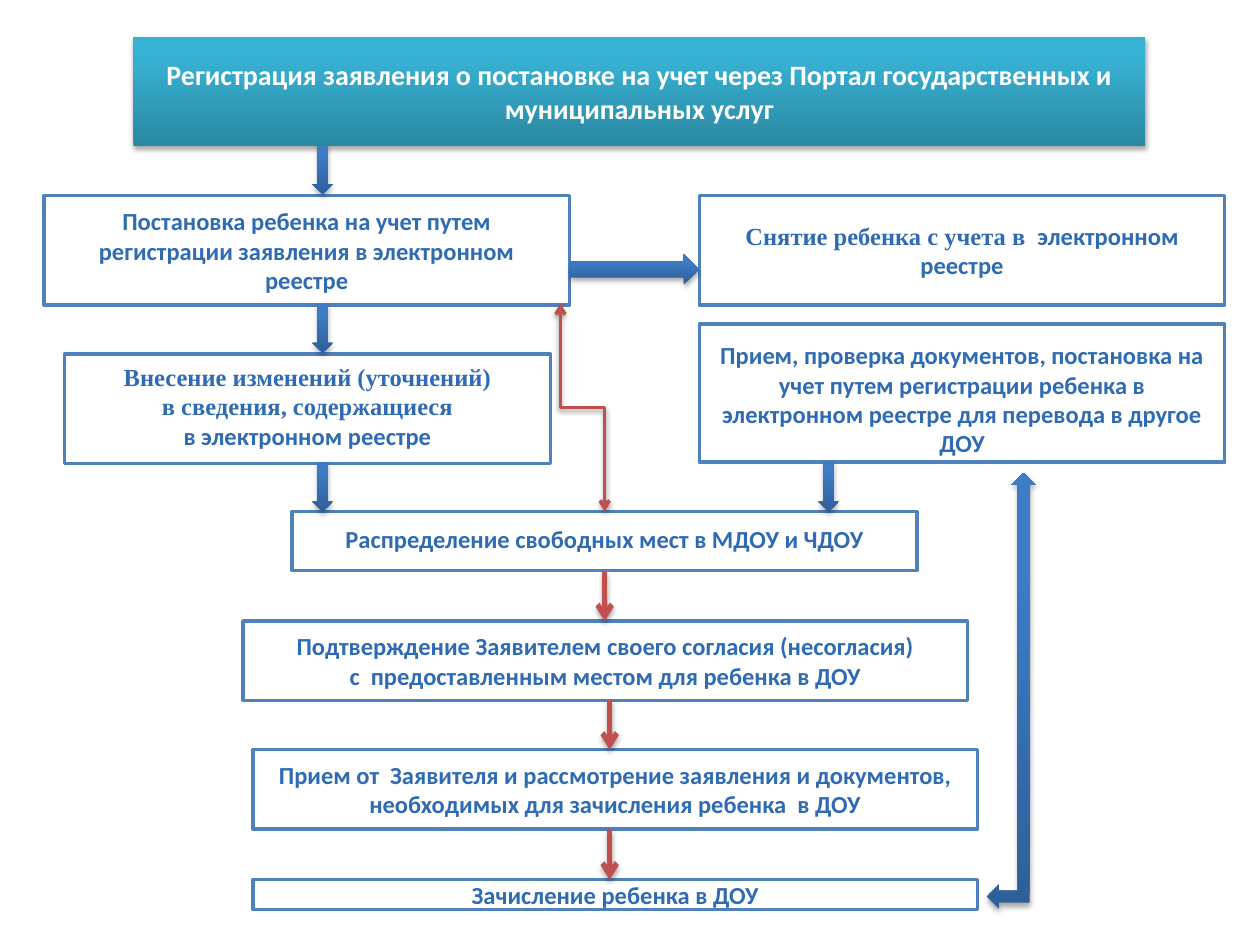
from lxml import etree
from pptx import Presentation
from pptx.dml.color import RGBColor
from pptx.enum.shapes import MSO_CONNECTOR as CONN, MSO_SHAPE as SHAPE
from pptx.enum.text import MSO_ANCHOR as ANCHOR, PP_ALIGN as ALIGN
from pptx.oxml.ns import qn
from pptx.util import Cm, Pt

SANS, SERIF = "Calibri", "Times New Roman"


def rgb(code):
    return RGBColor.from_string(code)


def add_shadow(shape):
    effects = etree.SubElement(shape._element.spPr, qn("a:effectLst"))
    outer = etree.SubElement(effects, qn("a:outerShdw"), blurRad=str(Pt(3.1)),
                             dist=str(Pt(1.8)), dir="5400000", rotWithShape="0")
    color = etree.SubElement(outer, qn("a:srgbClr"), val="000000")
    etree.SubElement(color, qn("a:alpha"), val="35000")


class Flowchart:
    BORDER, TEXT, RED = "4F81BD", "2F6BB3", "C0504D"
    BLUE_FADE = ("2F5F99", "3D7CC7")
    TEAL_FADE = ("2A88A2", "37B1D2")
    INSET = 0.13

    def __init__(self, slide):
        self.s = slide

    def shape(self, kind, x, y, w, h):
        sp = self.s.shapes.add_shape(kind, Cm(x), Cm(y), Cm(w), Cm(h))
        sp.shadow.inherit = False
        return sp

    def faded(self, kind, box, colors):
        """Shape with a vertical gradient, dark at the bottom, and a shadow."""
        sp = self.shape(kind, *box)
        sp.line.fill.background()
        sp.fill.gradient()
        sp.fill.gradient_angle = 90
        for stop, color, position in zip(sp.fill.gradient_stops, colors, (0, 0.8)):
            stop.color.rgb = rgb(color)
            stop.position = position
        effects = sp._element.spPr.find(qn("a:effectLst"))
        sp._element.spPr.remove(effects)
        add_shadow(sp)
        return sp

    def label(self, sp, lines, size, color, shift=0):
        """Centre the lines, each a list of (text, font); shift moves them down in cm."""
        tf = sp.text_frame
        tf.word_wrap = True
        tf.vertical_anchor = ANCHOR.MIDDLE
        tf.margin_top = Cm(self.INSET + max(shift, 0) * 2)
        tf.margin_bottom = Cm(self.INSET + max(-shift, 0) * 2)
        for i, line in enumerate(lines):
            p = tf.add_paragraph() if i else tf.paragraphs[0]
            p.alignment = ALIGN.CENTER
            for text, font in line:
                r = p.add_run()
                r.text = text
                r.font.name = font
                r.font.size = Pt(size)
                r.font.bold = True
                r.font.color.rgb = rgb(color)

    def title(self, box, text):
        sp = self.faded(SHAPE.RECTANGLE, box, self.TEAL_FADE)
        self.label(sp, [[(text, SANS)]], 16, "FFFFFF")

    def step(self, box, lines, shift=0):
        sp = self.shape(SHAPE.RECTANGLE, *box)
        sp.fill.solid()
        sp.fill.fore_color.rgb = rgb("FFFFFF")
        sp.line.color.rgb = rgb(self.BORDER)
        sp.line.width = Pt(2)
        self.label(sp, lines, 14, self.TEXT, shift)

    def arrow(self, kind, *box):
        self.faded(kind, box, self.BLUE_FADE)

    def connector(self, kind, ends, width, tips):
        c = self.s.shapes.add_connector(kind, *(Cm(v) for v in ends))
        c.line.color.rgb = rgb(self.RED)
        c.line.width = Pt(width)
        ln = c._element.spPr.find(qn("a:ln"))
        for tip in tips:
            etree.SubElement(ln, qn(f"a:{tip}"), type="arrow")
        add_shadow(c)
        return c

    def red_arrow(self, x, top, bottom):
        self.connector(CONN.STRAIGHT, (x, top, x, bottom), 3, ["tailEnd"])

    def red_elbow(self, x1, y1, x2, y2):
        """Double-headed elbow that leaves and arrives vertically."""
        cx, cy = (x1 + x2) / 2, (y1 + y2) / 2
        dx, dy = (x2 - x1) / 2, (y2 - y1) / 2
        c = self.connector(CONN.ELBOW, (cx + dy, cy - dx, cx - dy, cy + dx), 2,
                           ["headEnd", "tailEnd"])
        c._element.spPr.find(qn("a:xfrm")).set("rot", "16200000")


STEPS = [
    ((0.89, 3.94, 10.59, 2.21), [
        [("Постановка ребенка на учет путем", SANS)],
        [("регистрации заявления в электронном реестре", SANS)]]),
    ((14.1, 3.94, 10.59, 2.21), [
        [("Снятие ребенка с учета в ", SERIF), (" электронном реестре", SANS)]]),
    ((1.3, 7.14, 9.8, 2.21), [
        [("Внесение изменений (уточнений)", SERIF)],
        [("в сведения, содержащиеся", SERIF)],
        [("в электронном реестре", SANS)]], -0.06),
    ((14.1, 6.53, 10.59, 2.79), [
        [("Прием, проверка документов, постановка на учет путем регистрации "
          "ребенка в электронном реестре для перевода в другое ДОУ", SANS)]], 0.12),
    ((5.89, 10.31, 12.6, 1.19), [
        [("Распределение свободных мест в МДОУ и ЧДОУ", SANS)]], -0.05),
    ((4.9, 12.52, 14.61, 1.6), [
        [("Подтверждение Заявителем своего согласия (несогласия)", SANS)],
        [("с  предоставленным местом для ребенка в ДОУ", SANS)]]),
    ((5.1, 15.11, 14.61, 1.6), [
        [("Прием от  Заявителя и рассмотрение заявления и документов, "
          "необходимых для зачисления ребенка  в ДОУ", SANS)]]),
    ((5.1, 17.73, 14.61, 0.61), [[("Зачисление ребенка в ДОУ", SANS)]]),
]


def main():
    prs = Presentation()
    prs.slide_width, prs.slide_height = Cm(25.4), Cm(19.05)
    chart = Flowchart(prs.slides.add_slide(prs.slide_layouts[6]))

    chart.title((2.69, 0.74, 20.4, 2.21),
                "Регистрация заявления о постановке на учет через Портал "
                "государственных и муниципальных услуг")
    for step in STEPS:
        chart.step(*step)

    for x, y in [(6.3, 2.92), (6.3, 6.12), (6.3, 9.32), (16.5, 9.32)]:
        chart.arrow(SHAPE.DOWN_ARROW, x, y, 0.41, 1)
    chart.arrow(SHAPE.RIGHT_ARROW, 11.5, 5.13, 2.59, 0.61)
    chart.arrow(SHAPE.LEFT_UP_ARROW, 19.89, 9.53, 0.99, 8.79)

    chart.red_elbow(11.3, 6.12, 12.19, 10.31)
    for x, top, bottom in [(12.19, 11.53, 12.52), (12.29, 14.12, 15.11),
                           (12.29, 16.71, 17.73)]:
        chart.red_arrow(x, top, bottom)

    prs.save("out.pptx")


if __name__ == "__main__":
    main()
